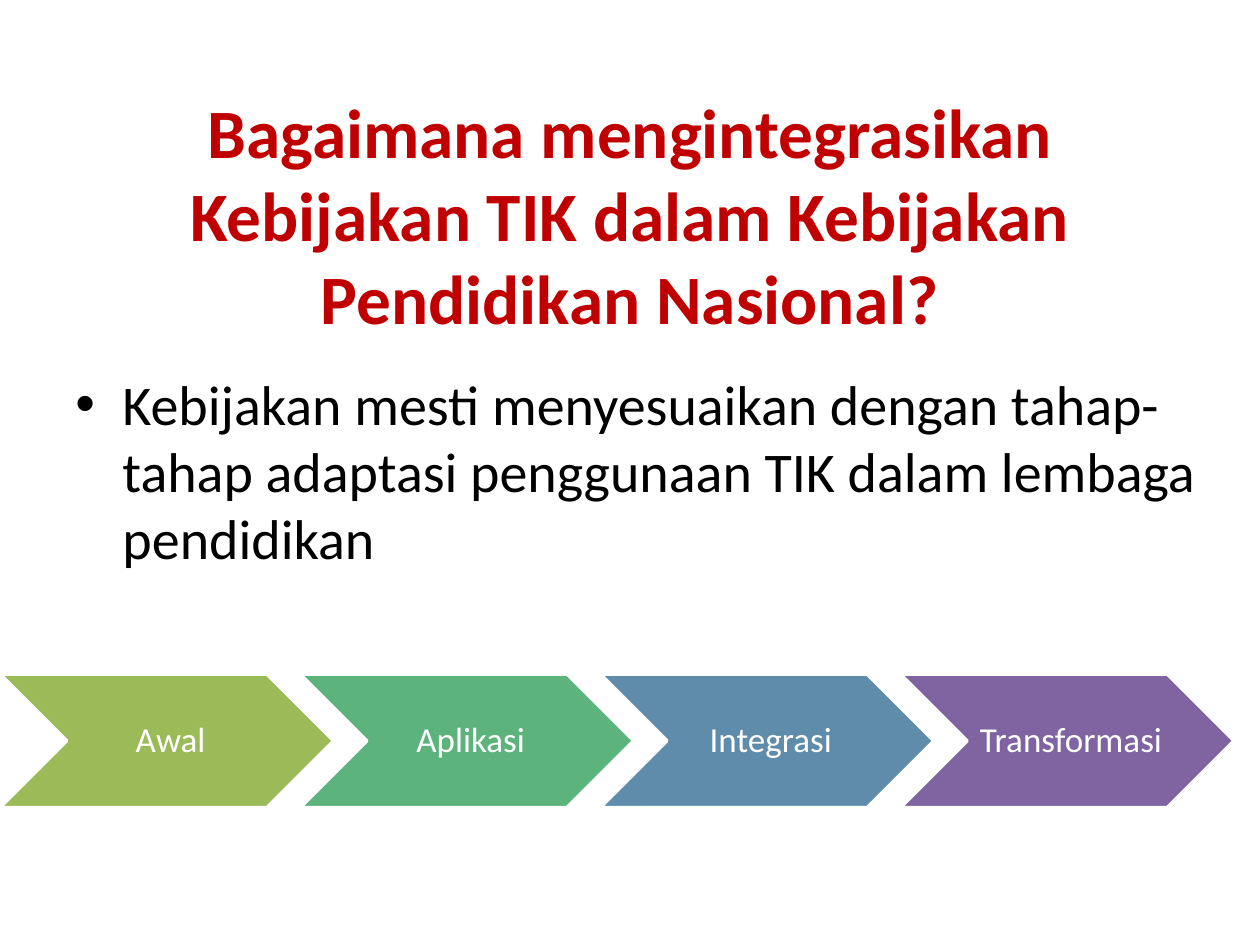
"""Build a slide on fitting ICT policy into national education policy."""
from lxml import etree
from pptx import Presentation
from pptx import util as u
from pptx.dml.color import RGBColor
from pptx.enum import shapes, text
from pptx.oxml import ns

RED = RGBColor(0xC0, 0x00, 0x00)
BLACK = RGBColor(0x00, 0x00, 0x00)
WHITE = RGBColor(0xFF, 0xFF, 0xFF)
LIME = RGBColor(0x9B, 0xBB, 0x59)
GREEN = RGBColor(0x5C, 0xB3, 0x7C)
BLUE = RGBColor(0x60, 0x8C, 0xAB)
PURPLE = RGBColor(0x80, 0x64, 0xA2)

STAGES = [("Awal", LIME), ("Aplikasi", GREEN),
          ("Integrasi", BLUE), ("Transformasi", PURPLE)]


class Deck:
    """Hold the text styles and the current slide."""

    styles = {
        "title": {"size": u.Pt(39.6), "bold": True},
        "body": {"size": u.Pt(32)},
        "stage": {"size": u.Pt(20)},
    }

    def __init__(self, slide):
        self.s = slide

    def add_text(self, sp, wording, style, color, align, frame):
        """Fill a shape with one formatted paragraph and return it."""
        tf = sp.text_frame
        for name, value in frame.items():
            setattr(tf, name, value)
        p = tf.paragraphs[0]
        p.alignment = align
        r = p.add_run()
        r.text = wording
        for name, value in {"name": "Calibri", **self.styles[style]}.items():
            setattr(r.font, name, value)
        r.font.color.rgb = color
        return p

    def title(self, wording, box):
        """Place and fill the title placeholder."""
        sp = self.s.shapes.title
        sp.left, sp.top, sp.width, sp.height = map(u.Cm, box)
        frame = {"auto_size": text.MSO_AUTO_SIZE.NONE, "word_wrap": True,
                 "vertical_anchor": text.MSO_ANCHOR.MIDDLE,
                 "margin_bottom": u.Cm(1.8)}
        self.add_text(sp, wording, "title", RED, text.PP_ALIGN.CENTER, frame)

    def bullet(self, wording, box):
        """Add a text box with one bulleted paragraph."""
        sp = self.s.shapes.add_textbox(*map(u.Cm, box))
        p = self.add_text(sp, wording, "body", BLACK, text.PP_ALIGN.LEFT,
                          {"word_wrap": True})
        p.space_before = u.Pt(6.4)
        pr = p._p.get_or_add_pPr()
        indent = u.Cm(0.95)
        pr.set("marL", str(indent))
        pr.set("indent", str(-indent))
        etree.SubElement(pr, ns.qn("a:buFont")).set("typeface", "Arial")
        etree.SubElement(pr, ns.qn("a:buChar")).set("char", "•")

    def chevron(self, wording, fill, box):
        """Add one labelled stage arrow."""
        sp = self.s.shapes.add_shape(shapes.MSO_SHAPE.CHEVRON, *map(u.Cm, box))
        sp.shadow.inherit = False
        sp.fill.solid()
        sp.fill.fore_color.rgb = fill
        sp.line.color.rgb = WHITE
        sp.line.width = u.Pt(2)
        frame = {"word_wrap": False, "vertical_anchor": text.MSO_ANCHOR.MIDDLE,
                 "margin_left": u.Cm(0.23), "margin_right": u.Cm(0.08),
                 "margin_top": u.Cm(0.08), "margin_bottom": u.Cm(0.08)}
        p = self.add_text(sp, wording, "stage", WHITE, text.PP_ALIGN.CENTER,
                          frame)
        p.line_spacing = 0.9


def main():
    """Build and save the slide."""
    prs = Presentation()
    prs.slide_width, prs.slide_height = u.Cm(25.4), u.Cm(19.05)
    deck = Deck(prs.slides.add_slide(prs.slide_layouts[5]))
    deck.title("Bagaimana mengintegrasikan Kebijakan TIK dalam Kebijakan "
               "Pendidikan Nasional?", (1.27, 3.56, 22.86, 3.18))
    deck.bullet("Kebijakan mesti menyesuaikan dengan tahap-tahap adaptasi "
                "penggunaan TIK dalam lembaga pendidikan",
                (1.27, 7.32, 23.24, 4.6))
    width, pitch = 6.73, 6.05
    for i, (name, fill) in enumerate(STAGES):
        deck.chevron(name, fill, (i * pitch, 13.59, width, 2.69))
    prs.save("out.pptx")


if __name__ == "__main__":
    main()
